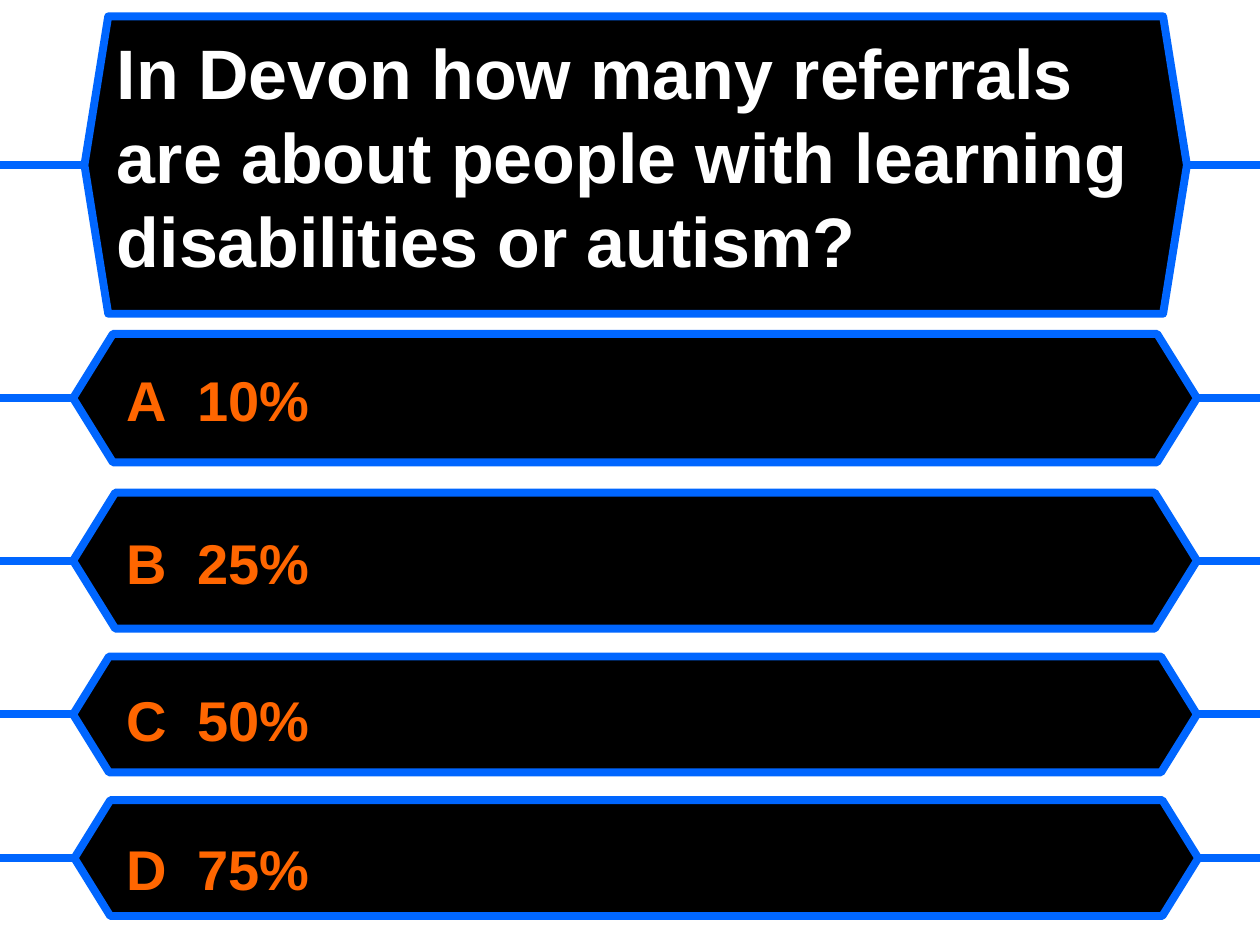
from dataclasses import dataclass
from typing import NamedTuple

from lxml.etree import SubElement
from pptx import Presentation
from pptx.dml.color import RGBColor
from pptx.enum.shapes import MSO_CONNECTOR as Connector, MSO_SHAPE as Shape
from pptx.enum.text import MSO_ANCHOR as Anchor, PP_ALIGN as Align
from pptx.oxml.ns import qn
from pptx.util import Inches, Pt

WIDTH, HEIGHT = Inches(10), Inches(7.5)
BLEED = 1  # percent of the width by which the side lines run past the edge


@dataclass(frozen=True)
class Theme:
    panel: RGBColor = RGBColor(0x00, 0x00, 0x00)
    outline: RGBColor = RGBColor(0x00, 0x66, 0xFF)
    question: RGBColor = RGBColor(0xFF, 0xFF, 0xFF)
    answer: RGBColor = RGBColor(0xFF, 0x66, 0x00)
    font: str = "Arial"
    question_size: int = 40
    answer_size: int = 32
    line_width: float = 4.5


class Box(NamedTuple):
    """A rectangle in percent of the slide's width and height."""
    left: float
    top: float
    width: float
    height: float

    def emu(self) -> tuple[int, int, int, int]:
        return across(self.left), down(self.top), across(self.width), down(self.height)


class Panel(NamedTuple):
    box: Box
    point: float


class Answer(NamedTuple):
    letter: str
    value: str
    space_before: float


THEME = Theme()
ANSWER_POINT = 0.31
PANELS = [
    Panel(Box(6.7, 1.73, 87.5, 31.47), 0.08),
    Panel(Box(5.8, 35.33, 89.2, 13.6), ANSWER_POINT),
    Panel(Box(5.8, 52.13, 89.2, 14.4), ANSWER_POINT),
    Panel(Box(5.8, 69.47, 89.2, 12.27), ANSWER_POINT),
    Panel(Box(5.9, 84.67, 89.2, 12.27), ANSWER_POINT),
]
QUESTION = "In Devon how many referrals are about people with learning disabilities or autism?"
QUESTION_BOX = Box(8.3, 1.73, 84.2, 29.47)
ANSWERS_BOX = Box(9.1, 38, 83, 60)
ANSWERS = [
    Answer("A", "10%", 0),
    Answer("B", "25%", 55),
    Answer("C", "50%", 51),
    Answer("D", "75%", 47),
]


def across(percent: float) -> int:
    return round(WIDTH * percent / 100)


def down(percent: float) -> int:
    return round(HEIGHT * percent / 100)


def style_line(line) -> None:
    line.color.rgb = THEME.outline
    line.width = Pt(THEME.line_width)


def add_panel(s, panel: Panel) -> None:
    sp = s.shapes.add_shape(Shape.HEXAGON, *panel.box.emu())
    sp.adjustments[0] = panel.point
    sp.shadow.inherit = False
    sp.fill.solid()
    sp.fill.fore_color.rgb = THEME.panel
    style_line(sp.line)


def add_side_lines(s, box: Box) -> None:
    """Run a line from each side point of the panel to the slide's edge."""
    y = down(box.top + box.height / 2)
    for start, end in ((box.left, -BLEED), (box.left + box.width, 100 + BLEED)):
        line = s.shapes.add_connector(Connector.STRAIGHT, across(start), y, across(end), y)
        SubElement(line._element.spPr, qn("a:effectLst"))
        style_line(line.line)


def add_text_box(s, box: Box, *, anchor: Anchor, top_inset: float = 0.05):
    tf = s.shapes.add_textbox(*box.emu()).text_frame
    tf.word_wrap = True
    tf.vertical_anchor = anchor
    tf.margin_top = Inches(top_inset)
    return tf


def write(p, text: str, *, size: int, color: RGBColor, space_before: float = 0) -> None:
    p.alignment = Align.LEFT
    p.space_before = Pt(space_before)
    r = p.add_run()
    r.text = text
    r.font.name = THEME.font
    r.font.size = Pt(size)
    r.font.bold = True
    r.font.color.rgb = color


def set_hanging_tab(p, indent: int) -> None:
    """Start the text after a tab at the paragraph's hanging indent."""
    pPr = p._p.get_or_add_pPr()
    pPr.set("marL", str(indent))
    pPr.set("indent", str(-indent))
    tabs = SubElement(pPr, qn("a:tabLst"))
    SubElement(tabs, qn("a:tab"), pos=str(indent), algn="l")


def add_answers(s) -> None:
    tf = add_text_box(s, ANSWERS_BOX, anchor=Anchor.TOP, top_inset=0.05)
    for i, answer in enumerate(ANSWERS):
        p = tf.add_paragraph() if i else tf.paragraphs[0]
        set_hanging_tab(p, Inches(0.56))
        write(p, f"{answer.letter}\t{answer.value}", size=THEME.answer_size,
              color=THEME.answer, space_before=answer.space_before)


def main() -> None:
    prs = Presentation()
    prs.slide_width, prs.slide_height = WIDTH, HEIGHT
    s = prs.slides.add_slide(prs.slide_layouts[6])
    for panel in PANELS:
        add_panel(s, panel)
        add_side_lines(s, panel.box)
    tf = add_text_box(s, QUESTION_BOX, anchor=Anchor.MIDDLE)
    write(tf.paragraphs[0], QUESTION, size=THEME.question_size, color=THEME.question)
    add_answers(s)
    prs.save("out.pptx")


if __name__ == "__main__":
    main()
